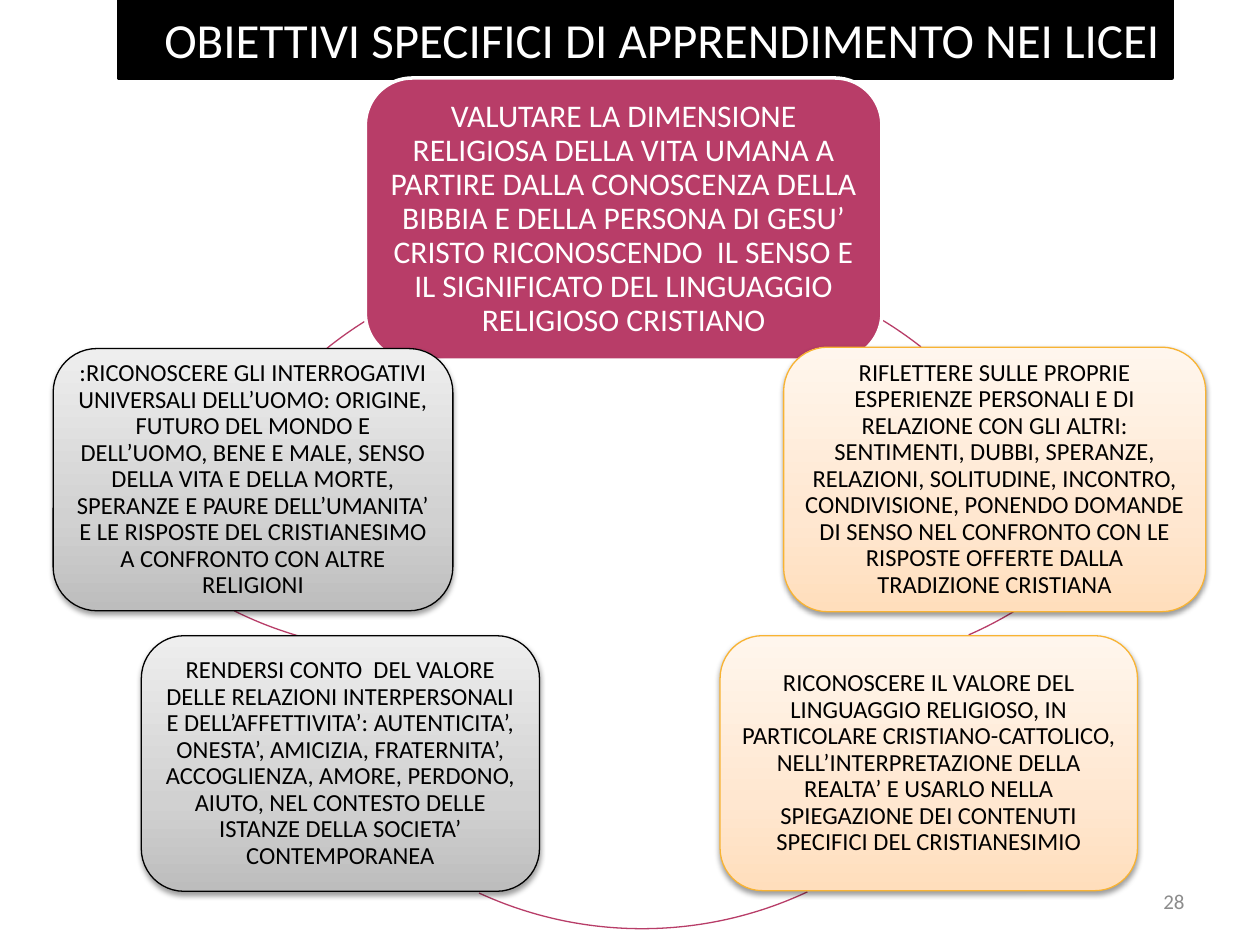
from copy import deepcopy

from lxml.etree import SubElement
from pptx import Presentation
from pptx.dml.color import RGBColor
from pptx.enum.shapes import MSO_SHAPE as Shape
from pptx.enum.text import MSO_ANCHOR as Anchor, MSO_AUTO_SIZE as AutoSize, PP_ALIGN as Align
from pptx.oxml.ns import qn
from pptx.util import Pt

BLACK = RGBColor(0x00, 0x00, 0x00)
WHITE = RGBColor(0xFF, 0xFF, 0xFF)
NUMBER_GREY = RGBColor(0x8C, 0x8C, 0x8C)
MAGENTA = RGBColor(0xB8, 0x3D, 0x68)
ORANGE = RGBColor(0xF8, 0xB3, 0x33)
ORANGE_SHADES = (RGBColor(0xFF, 0xDE, 0xBC), RGBColor(0xFF, 0xE7, 0xD0), RGBColor(0xFF, 0xF6, 0xED))
GREY_SHADES = (RGBColor(0xBD, 0xBD, 0xBD), RGBColor(0xD1, 0xD1, 0xD1), RGBColor(0xEE, 0xEE, 0xEE))
SHADE_POSITIONS = (0, 0.35, 1)

RING_DIAMETER = 445.7

MAIN_GOAL = (
    "VALUTARE LA DIMENSIONE RELIGIOSA DELLA VITA UMANA A PARTIRE DALLA CONOSCENZA DELLA BIBBIA "
    "E DELLA PERSONA DI GESU’ CRISTO RICONOSCENDO  IL SENSO E IL SIGNIFICATO DEL LINGUAGGIO "
    "RELIGIOSO CRISTIANO"
)

# (left, top, width, height), outline, shades, text
GOALS = [
    ((447.8, 198.4, 241.2, 151.2), ORANGE, ORANGE_SHADES,
     "RIFLETTERE SULLE PROPRIE ESPERIENZE PERSONALI E DI RELAZIONE CON GLI ALTRI: SENTIMENTI, "
     "DUBBI, SPERANZE, RELAZIONI, SOLITUDINE, INCONTRO, CONDIVISIONE, PONENDO DOMANDE DI SENSO "
     "NEL CONFRONTO CON LE RISPOSTE OFFERTE DALLA TRADIZIONE CRISTIANA"),
    ((411.5, 363.3, 238.5, 145.7), ORANGE, ORANGE_SHADES,
     "RICONOSCERE IL VALORE DEL LINGUAGGIO RELIGIOSO, IN PARTICOLARE CRISTIANO-CATTOLICO, "
     "NELL’INTERPRETAZIONE DELLA REALTA’ E USARLO NELLA SPIEGAZIONE DEI CONTENUTI SPECIFICI "
     "DEL CRISTIANESIMIO"),
    ((80.8, 363.3, 227.5, 146), BLACK, GREY_SHADES,
     "RENDERSI CONTO  DEL VALORE DELLE RELAZIONI INTERPERSONALI E DELL’AFFETTIVITA’: "
     "AUTENTICITA’, ONESTA’, AMICIZIA, FRATERNITA’, ACCOGLIENZA, AMORE, PERDONO, AIUTO, NEL "
     "CONTESTO DELLE ISTANZE DELLA SOCIETA’ CONTEMPORANEA"),
    ((30.4, 199.2, 228.4, 149.8), BLACK, GREY_SHADES,
     ":RICONOSCERE GLI INTERROGATIVI UNIVERSALI DELL’UOMO: ORIGINE, FUTURO DEL MONDO E "
     "DELL’UOMO, BENE E MALE, SENSO DELLA VITA E DELLA MORTE, SPERANZE E PAURE DELL’UMANITA’ "
     "E LE RISPOSTE DEL CRISTIANESIMO A CONFRONTO CON ALTRE RELIGIONI"),
]

# left and top of the ring, then start and end angle in degrees, clockwise from the right
RING_ARCS = [
    (165.6, 150.5, 301.4, 308.2),
    (241.2, -64.1, 58.8, 66.3),
    (144, 85, 64.9, 114.7),
    (10.1, -73.4, 106.3, 116.4),
    (103.7, 149.8, 231.2, 238.2),
]


class SlideBuilder:
    font = "Calibri"

    def __init__(self, slide):
        self.slide = slide

    def add_text(self, shape, text, size, color, align, inset=None):
        frame = shape.text_frame
        frame.word_wrap = True
        frame.auto_size = AutoSize.NONE
        frame.vertical_anchor = Anchor.MIDDLE
        if inset is not None:
            frame.margin_left = frame.margin_right = Pt(inset)
            frame.margin_top = frame.margin_bottom = Pt(inset)
        paragraph = frame.paragraphs[0]
        paragraph.alignment = align
        run = paragraph.add_run()
        run.text = text
        run.font.name = self.font
        run.font.size = Pt(size)
        run.font.color.rgb = color
        return paragraph

    def outline(self, shape, color, width):
        shape.line.color.rgb = color
        shape.line.width = Pt(width)

    def title(self, box, text):
        title = self.slide.shapes.title
        title.left, title.top, title.width, title.height = map(Pt, box)
        title.fill.solid()
        title.fill.fore_color.rgb = BLACK
        self.outline(title, BLACK, 2)
        self.add_text(title, text, 28, WHITE, Align.RIGHT)

    def slide_number(self, box, text):
        shape = self.slide.shapes.add_textbox(*map(Pt, box))
        self.add_text(shape, text, 12, NUMBER_GREY, Align.RIGHT)

    def arc(self, left, top, start, end):
        diameter = Pt(RING_DIAMETER)
        shape = self.slide.shapes.add_shape(Shape.ARC, Pt(left), Pt(top), diameter, diameter)
        shape.shadow.inherit = False
        # Angles are stored in 1/60000 degree, adjustments in units of 100000.
        for index, angle in enumerate((start, end)):
            shape.adjustments[index] = angle * 0.6
        shape.fill.background()
        self.outline(shape, MAGENTA, 0.75)

    def card(self, box, text, size, text_color, line_color, line_width):
        shape = self.slide.shapes.add_shape(Shape.ROUNDED_RECTANGLE, *map(Pt, box))
        shape.shadow.inherit = False
        self.outline(shape, line_color, line_width)
        paragraph = self.add_text(shape, text, size, text_color, Align.CENTER, inset=0.3 * size)
        paragraph.line_spacing = 0.9
        return shape

    def main_card(self, box, text):
        shape = self.card(box, text, 18, WHITE, WHITE, 2)
        shape.fill.solid()
        shape.fill.fore_color.rgb = MAGENTA

    def shaded_card(self, box, line_color, shades, text):
        shape = self.card(box, text, 14, BLACK, line_color, 0.75)
        self.shade(shape, shades)
        self.cast_shadow(shape)

    def shade(self, shape, shades):
        """Fill with a three-colour gradient that runs from bottom to top."""
        shape.fill.gradient()
        shape.fill.gradient_angle = 90
        stop_list = shape._element.spPr.find(".//" + qn("a:gsLst"))
        stop_list.append(deepcopy(stop_list[0]))
        for stop, position, color in zip(shape.fill.gradient_stops, SHADE_POSITIONS, shades):
            stop.position = position
            stop.color.rgb = color

    def cast_shadow(self, shape):
        effects = shape._element.spPr.find(qn("a:effectLst"))
        shadow = SubElement(effects, qn("a:outerShdw"), blurRad=str(Pt(3.1)), dist=str(Pt(1.6)),
                            dir="5400000", rotWithShape="0")
        color = SubElement(shadow, qn("a:srgbClr"), val=str(BLACK))
        SubElement(color, qn("a:alpha"), val="38000")


def main():
    presentation = Presentation()
    presentation.slide_width, presentation.slide_height = Pt(720), Pt(540)
    title_only = presentation.slide_layouts[5]
    builder = SlideBuilder(presentation.slides.add_slide(title_only))

    builder.title((67.7, 0, 602, 44.6), "OBIETTIVI SPECIFICI DI APPRENDIMENTO NEI LICEI")
    builder.slide_number((516, 500.5, 168, 28.8), "28")
    for ring_arc in RING_ARCS:
        builder.arc(*ring_arc)
    builder.main_card((208.8, 44.6, 295.2, 161.3), MAIN_GOAL)
    for goal in GOALS:
        builder.shaded_card(*goal)

    presentation.save("out.pptx")


if __name__ == "__main__":
    main()
